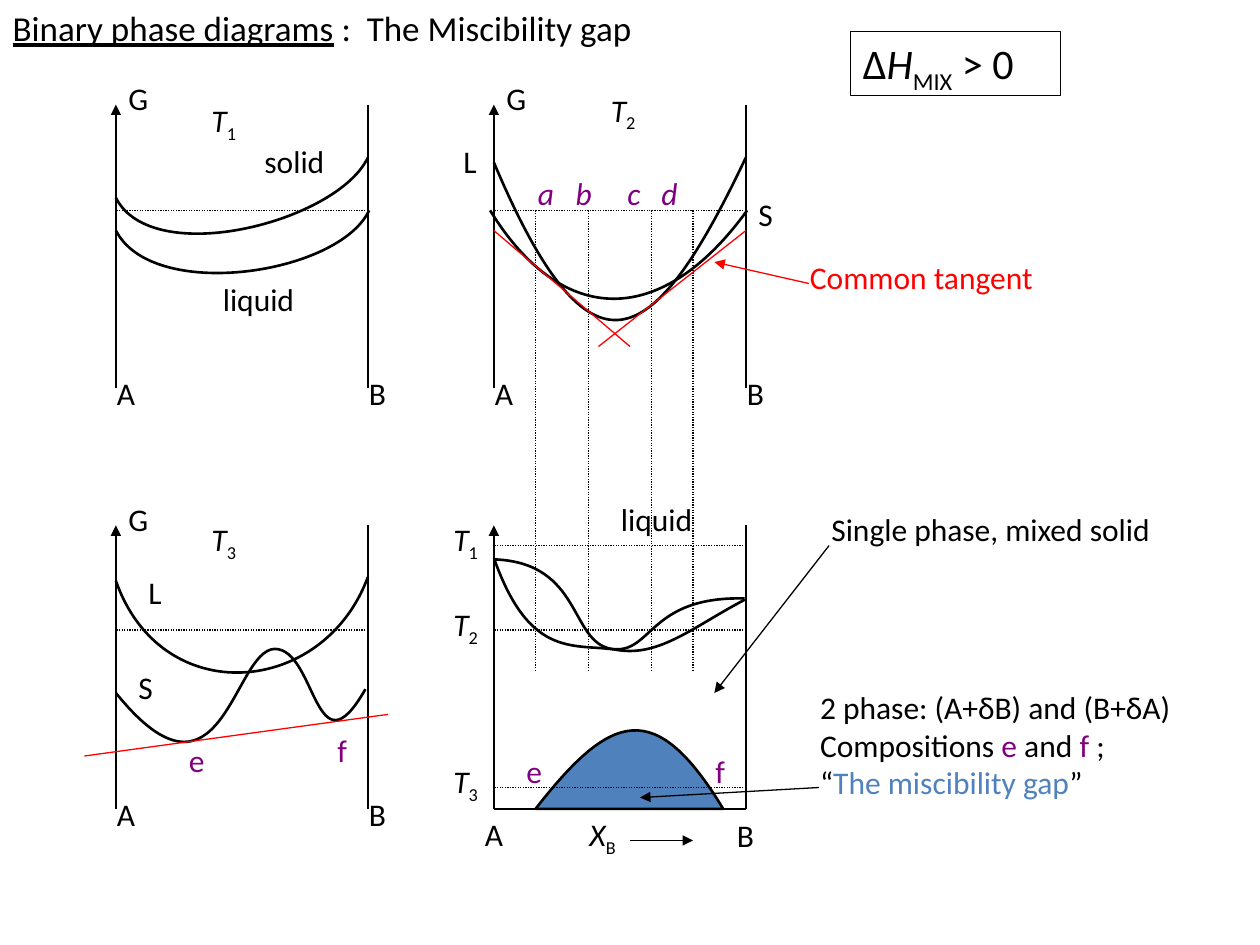
from dataclasses import dataclass
from typing import NamedTuple

from lxml import etree
from pptx import Presentation
from pptx.dml.color import RGBColor
from pptx.enum.dml import MSO_LINE
from pptx.enum.shapes import MSO_CONNECTOR, MSO_SHAPE
from pptx.enum.text import MSO_ANCHOR, MSO_AUTO_SIZE, PP_ALIGN
from pptx.oxml.ns import qn
from pptx.util import Inches, Pt

STRAIGHT = MSO_CONNECTOR.STRAIGHT
RECTANGLE = MSO_SHAPE.RECTANGLE
DOTTED = MSO_LINE.ROUND_DOT
LEFT, TOP = PP_ALIGN.LEFT, MSO_ANCHOR.TOP
NO_FIT = MSO_AUTO_SIZE.NONE
AT_START, AT_END = "a:headEnd", "a:tailEnd"


@dataclass(frozen=True)
class Theme:
    font: str = "Calibri"
    title: int = 20
    body: int = 18
    formula: int = 24
    thin: float = 0.75
    thick: float = 1.5
    black: RGBColor = RGBColor(0, 0, 0)
    red: RGBColor = RGBColor(255, 0, 0)
    purple: RGBColor = RGBColor(128, 0, 128)
    blue: RGBColor = RGBColor(0x4F, 0x81, 0xBD)


THEME = Theme()
Point = tuple[float, float]


class Span(NamedTuple):
    text: str
    color: RGBColor = THEME.black
    italic: bool = False
    subscript: bool = False
    underline: bool = False


class Label(NamedTuple):
    at: Point
    width: float
    lines: list[list[Span]]


class Rule(NamedTuple):
    start: Point
    end: Point
    color: RGBColor = THEME.black
    dotted: bool = False
    arrow: str = ""


class Curve(NamedTuple):
    """A start point, then Bezier control points in threes."""
    points: list[Point]
    fill: RGBColor | None = None


class Panel(NamedTuple):
    left: float
    top: float
    ties: list[float]       # heights of the dotted lines
    curves: list[Curve]


def word(x: float, y: float, width: float, text: str,
         color: RGBColor = THEME.black) -> Label:
    return Label((x, y), width, [[Span(text, color)]])


def symbol(x: float, y: float, letter: str, index: str, width: float = 0.45) -> Label:
    return Label((x, y), width, [[Span(letter, italic=True), Span(index, subscript=True)]])


def write(frame, lines: list[list[Span]], size: int) -> None:
    frame.auto_size = NO_FIT
    frame.vertical_anchor = TOP
    for number, spans in enumerate(lines):
        para = frame.add_paragraph() if number else frame.paragraphs[0]
        para.alignment = LEFT
        for span in spans:
            run = para.add_run()
            run.text = span.text
            run.font.name, run.font.size = THEME.font, Pt(size)
            run.font.color.rgb = span.color
            if span.italic:
                run.font.italic = True
            if span.underline:
                run.font.underline = True
            if span.subscript:
                run.font._element.set("baseline", "-25000")


def draw_label(page, label: Label):
    height = 0.1 + 0.3 * len(label.lines)
    box = page.shapes.add_textbox(*map(Inches, (*label.at, label.width, height)))
    box.text_frame.word_wrap = False
    write(box.text_frame, label.lines, THEME.body)
    return box


def draw_rule(page, rule: Rule) -> None:
    line = page.shapes.add_connector(STRAIGHT, *map(Inches, (*rule.start, *rule.end)))
    line.line.color.rgb = rule.color
    line.line.width = Pt(THEME.thin)
    if rule.dotted:
        line.line.dash_style = DOTTED
    if rule.arrow:
        etree.SubElement(line.line._get_or_add_ln(), qn(rule.arrow), type="triangle")
    etree.SubElement(line._element.spPr, qn("a:effectLst"))


def draw_curve(page, curve: Curve) -> None:
    start, *controls = [(Inches(x), Inches(y)) for x, y in curve.points]
    builder = page.shapes.build_freeform(*start)
    builder.add_line_segments(controls, close=curve.fill is not None)
    shape = builder.convert_to_shape()

    # Each three straight segments become one Bezier segment
    segments = list(shape._element.iter(qn("a:lnTo")))
    for first in range(0, len(controls), 3):
        bezier = etree.Element(qn("a:cubicBezTo"))
        segments[first].addprevious(bezier)
        for segment in segments[first:first + 3]:
            bezier.append(segment[0])
    for segment in segments:
        segment.getparent().remove(segment)

    shape.shadow.inherit = False
    shape.line.color.rgb = THEME.black
    shape.line.width = Pt(THEME.thick)
    if curve.fill is None:
        shape.fill.background()
    else:
        shape.fill.solid()
        shape.fill.fore_color.rgb = curve.fill


def draw_panel(page, panel: Panel) -> None:
    left, right = panel.left, panel.left + 2
    bottom = panel.top + 2.25
    draw_rule(page, Rule((left, panel.top), (left, bottom), arrow=AT_START))
    draw_rule(page, Rule((right, panel.top), (right, bottom)))
    for curve in panel.curves:
        draw_curve(page, curve)
    for y in panel.ties:
        draw_rule(page, Rule((right, y), (left, y), dotted=True))


PANELS = [
    Panel(0.92, 0.83, [1.67], [
        Curve([(2.93, 1.67), (2.69, 2.18), (1.21, 2.4), (0.92, 1.83)]),
        Curve([(2.92, 1.25), (2.68, 1.76), (1.21, 2.14), (0.92, 1.57)])]),
    Panel(3.92, 0.83, [1.67], [
        Curve([(5.93, 1.67), (5.25, 2.61), (4.46, 2.6), (3.89, 1.67)]),
        Curve([(5.92, 1.25), (5.18, 2.81), (4.69, 3.11), (3.92, 1.29)])]),
    Panel(0.92, 4.17, [5], [
        Curve([(2.9, 5.47), (2.5, 6.17), (2.51, 5.15), (2.18, 5.15),
               (1.85, 5.16), (1.76, 6.54), (0.92, 5.5)]),
        Curve([(2.92, 4.58), (2.57, 5.53), (1.28, 5.64), (0.92, 4.61)])]),
    Panel(3.92, 4.17, [4.33, 5, 6.25], [
        Curve([(5.91, 4.76), (5.51, 4.97), (5.24, 5.21), (4.91, 5.16),
               (4.57, 5.1), (4.21, 5.25), (3.92, 4.43)]),
        Curve([(5.91, 4.75), (5.14, 4.73), (5.18, 5.2), (4.85, 5.15),
               (4.52, 5.09), (4.62, 4.47), (3.93, 4.44)]),
        Curve([(5.74, 6.42), (5.2, 5.53), (4.85, 5.65), (4.25, 6.42),
               (4.25, 6.42), (5.74, 6.42), (5.74, 6.42)], THEME.blue)]),
]
RULES = [
    Rule((5, 2.75), (3.92, 1.83), THEME.red),               # common tangents
    Rule((4.75, 2.75), (5.92, 1.83), THEME.red),
    Rule((3.08, 5.67), (0.67, 6), THEME.red),
    Rule((6.42, 2.25), (5.67, 2.08), THEME.red, arrow=AT_END),  # callouts
    Rule((6.58, 4.33), (5.67, 5.5), arrow=AT_END),
    Rule((6.5, 6.25), (5.08, 6.33), arrow=AT_END),
    Rule((5.92, 6.42), (3.92, 6.42)),                       # composition axis
    Rule((5, 6.67), (5.5, 6.67), arrow=AT_END),
]
LABELS = [
    symbol(1.58, 0.75, "T", "1"), symbol(4.75, 0.67, "T", "2"),
    symbol(1.58, 4.08, "T", "3"), symbol(3.5, 4.08, "T", "1"),
    symbol(3.5, 4.75, "T", "2"), symbol(3.5, 6, "T", "3"),
    symbol(4.58, 6.42, "X", "B", 0.48),
    word(2, 1.08, 0.72, "solid"), word(1.67, 2.17, 0.78, "liquid"),
    word(4.83, 3.92, 0.78, "liquid"),
    word(3.58, 1.08, 0.34, "L"), word(5.92, 1.5, 0.37, "S"),
    word(1.08, 4.5, 0.34, "L"), word(1, 5.25, 0.37, "S"),
    word(3.75, 6.42, 0.37, "A"), word(5.75, 6.43, 0.37, "B"),
    word(1.4, 5.83, 0.34, "e", THEME.purple), word(2.58, 5.75, 0.27, "f", THEME.purple),
    word(4.08, 5.92, 0.34, "e", THEME.purple), word(5.58, 5.92, 0.27, "f", THEME.purple),
    word(6.33, 2, 2.19, "Common tangent", THEME.red),
    word(6.5, 4, 3.03, "Single phase, mixed solid"),
    Label((6.41, 5.41), 3.32, [
        [Span("2 phase: (A+δB) and (B+δA)")],
        [Span("Compositions "), Span("e", THEME.purple), Span(" and "),
         Span("f", THEME.purple), Span(" ;")],
        [Span("“"), Span("The miscibility gap", THEME.blue), Span("”")]]),
]


def main() -> None:
    deck = Presentation()
    deck.slide_width, deck.slide_height = Inches(10), Inches(7.5)
    page = deck.slides.add_slide(deck.slide_layouts[5])

    # Title
    title = page.shapes.title
    title.left, title.top, title.width, title.height = map(Inches, (0, 0, 5.16, 0.44))
    title.text_frame.word_wrap = False
    write(title.text_frame, [[Span("Binary phase diagrams", underline=True),
                              Span(" :  The Miscibility gap")]], THEME.title)

    # Enthalpy condition
    box = page.shapes.add_shape(RECTANGLE, *map(Inches, (6.75, 0.25, 1.67, 0.51)))
    box.shadow.inherit = False
    box.fill.background()
    box.line.color.rgb, box.line.width = THEME.black, Pt(THEME.thin)
    write(box.text_frame, [[Span("Δ"), Span("H", italic=True),
                            Span("MIX", subscript=True), Span(" > 0")]], THEME.formula)

    # Compositions carried down from the T2 curves to the phase diagram
    for x in (4.25, 4.67, 5.17, 5.5):
        draw_rule(page, Rule((x, 1.67), (x, 5.33), dotted=True))
    marks = draw_label(page, Label((4.17, 1.33), 1.58, [
        [Span("a\tb\tc\td", THEME.purple, italic=True)]]))
    marks.text_frame.word_wrap = True
    tabs = etree.Element(qn("a:tabLst"))
    for stop in (0.3, 0.71, 0.98):
        etree.SubElement(tabs, qn("a:tab"), pos=str(Inches(stop)), algn="l")
    marks.text_frame.paragraphs[0]._p.get_or_add_pPr().insert(0, tabs)

    # Panels; the first three are free-energy plots with the same axis letters
    for panel in PANELS:
        draw_panel(page, panel)
    for left, top, *_ in PANELS[:3]:
        draw_label(page, word(left, top - 0.25, 0.4, "G"))
        for x, letter in ((left - 0.09, "A"), (left + 1.91, "B")):
            draw_label(page, word(x, top + 2.09, 0.37, letter))

    # Tangents, arrows and labels
    for rule in RULES:
        draw_rule(page, rule)
    for label in LABELS:
        draw_label(page, label)

    deck.save("out.pptx")


if __name__ == "__main__":
    main()
